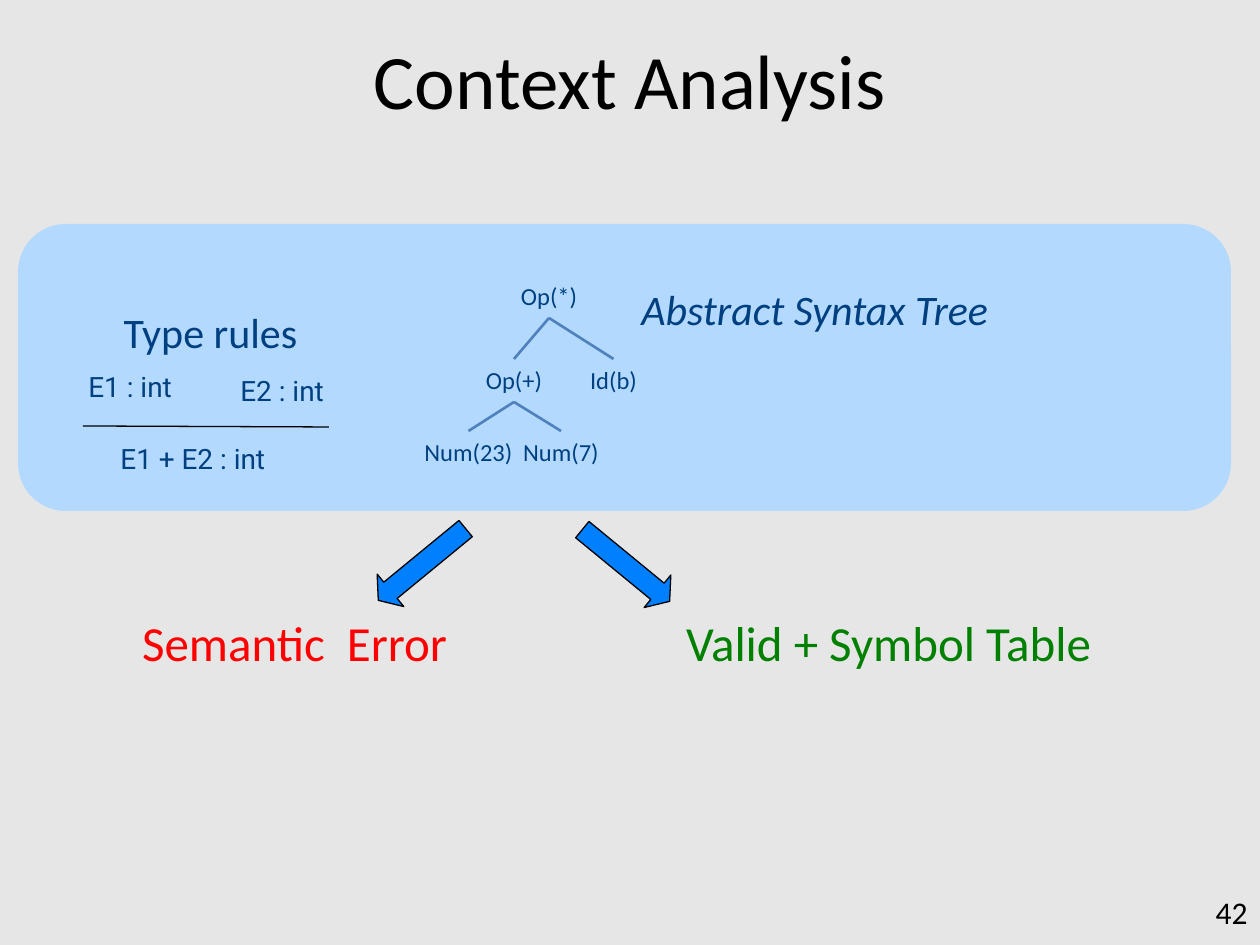
from lxml import etree
from pptx import Presentation
from pptx.dml.color import RGBColor
from pptx.enum.shapes import MSO_CONNECTOR, MSO_SHAPE
from pptx.enum.text import MSO_ANCHOR, MSO_AUTO_SIZE, PP_ALIGN
from pptx.oxml.ns import qn
from pptx.util import Emu, Inches, Pt

PX_PER_INCH = 126
STRAIGHT = MSO_CONNECTOR.STRAIGHT
ROUNDED, DOWN_ARROW = MSO_SHAPE.ROUNDED_RECTANGLE, MSO_SHAPE.DOWN_ARROW
LEFT, CENTER, RIGHT = PP_ALIGN.LEFT, PP_ALIGN.CENTER, PP_ALIGN.RIGHT
TOP_SITE, BOTTOM_SITE = 0, 2

COLORS = {
    "background": "E6E6E6",
    "panel": "B3D9FF",
    "black": "000000",
    "navy": "004080",
    "branch": "4F81BD",
    "arrow": "0080FF",
    "error": "FF0000",
    "valid": "008000",
}

# name: (text, box)
TREE_NODES = {
    "times": ("Op(*)", (508, 275, 82, 43)),
    "plus": ("Op(+)", (473, 359, 82, 43)),
    "id": ("Id(b)", (577, 359, 73, 43)),
    "left": ("Num(23)", (411, 431, 115, 43)),
    "right": ("Num(7)", (510, 431, 102, 43)),
}
TREE_BRANCHES = [("times", "id"), ("times", "plus"),
                 ("plus", "left"), ("plus", "right")]
RULE_PARTS = [
    ("E1 : int", (76, 363, 116, 47)),
    ("E2 : int", (228, 367, 116, 47)),
    ("E1 + E2 : int", (108, 435, 185, 47)),
]


def px(value):
    return Emu(round(value * Inches(1) / PX_PER_INCH))


def color(name):
    return RGBColor.from_string(COLORS[name])


def write(paragraph, text, size, color_name, align, font="Calibri", italic=False):
    paragraph.alignment = align
    run = paragraph.add_run()
    run.text = text
    run.font.name = font
    run.font.size = Pt(size)
    run.font.italic = italic
    run.font.color.rgb = color(color_name)


def add_text(shapes, text, box, size, color_name="navy", align=CENTER,
             wrap=False, grow=True, **style):
    text_box = shapes.add_textbox(*map(px, box))
    frame = text_box.text_frame
    frame.word_wrap = wrap
    frame.auto_size = MSO_AUTO_SIZE.SHAPE_TO_FIT_TEXT if grow else MSO_AUTO_SIZE.NONE
    write(frame.paragraphs[0], text, size, color_name, align, **style)
    return text_box


def add_line(shapes, ends, color_name, width):
    line = shapes.add_connector(STRAIGHT, *map(px, ends))
    line.line.color.rgb = color(color_name)
    line.line.width = Pt(width)
    etree.SubElement(line._element.spPr, qn("a:effectLst"))
    return line


def add_filled_shape(shapes, kind, box, fill, outline=None):
    shape = shapes.add_shape(kind, *map(px, box))
    shape.shadow.inherit = False
    shape.fill.solid()
    shape.fill.fore_color.rgb = color(fill)
    if outline:
        shape.line.color.rgb = color(outline)
        shape.line.width = Pt(0.75)
    else:
        shape.line.fill.background()
    return shape


def add_arrow(shapes, box, rotation):
    arrow = add_filled_shape(shapes, DOWN_ARROW, box, "arrow", "black")
    arrow.adjustments[0] = 0.5
    arrow.adjustments[1] = 0.375
    arrow.rotation = rotation


def add_title(slide, text):
    title = slide.shapes.title
    title.left, title.top, title.width, title.height = map(px, (94, 0, 1072, 158))
    title.text_frame.vertical_anchor = MSO_ANCHOR.MIDDLE
    write(title.text_frame.paragraphs[0], text, 44, "black", CENTER)


def add_syntax_tree(slide):
    shapes = slide.shapes.add_group_shape().shapes
    nodes = {name: add_text(shapes, text, box, 14)
             for name, (text, box) in TREE_NODES.items()}
    for parent, child in TREE_BRANCHES:
        parent_x, parent_y, parent_width, parent_height = TREE_NODES[parent][1]
        child_x, child_y, child_width, _ = TREE_NODES[child][1]
        ends = (parent_x + parent_width / 2, parent_y + parent_height,
                child_x + child_width / 2, child_y)
        branch = add_line(shapes, ends, "branch", 1.5)
        branch.begin_connect(nodes[parent], BOTTOM_SITE)
        branch.end_connect(nodes[child], TOP_SITE)


def add_type_rule(slide):
    """Draw the premises above a line and the conclusion below it."""
    shapes = slide.shapes.add_group_shape().shapes
    add_line(shapes, (83, 426, 329, 427), "black", 0.75)
    for text, box in RULE_PARTS:
        add_text(shapes, text, box, 16, align=LEFT, font="Roboto")


def main():
    presentation = Presentation()
    presentation.slide_width, presentation.slide_height = px(1260), px(945)
    slide = presentation.slides.add_slide(presentation.slide_layouts[5])
    slide.background.fill.solid()
    slide.background.fill.fore_color.rgb = color("background")
    shapes = slide.shapes

    add_title(slide, "Context Analysis")
    add_filled_shape(shapes, ROUNDED, (18, 224, 1213, 287), "panel")
    add_text(shapes, "42", (998, 887, 262, 38), 18, "black", RIGHT,
             wrap=True, grow=False)
    add_syntax_tree(slide)
    add_text(shapes, "Abstract Syntax Tree", (629, 277, 391, 63), 24,
             align=LEFT, italic=True)
    add_type_rule(slide)
    add_text(shapes, "Type rules", (32, 300, 357, 63), 24, wrap=True)

    add_arrow(shapes, (401, 508, 42, 113), 50.6)
    add_text(shapes, "Semantic  Error", (83, 606, 423, 72), 28, "error", wrap=True)
    add_arrow(shapes, (605, 509, 42, 113), -50.6)
    add_text(shapes, "Valid + Symbol Table ", (673, 606, 442, 72), 28, "valid")

    presentation.save("out.pptx")


if __name__ == "__main__":
    main()
